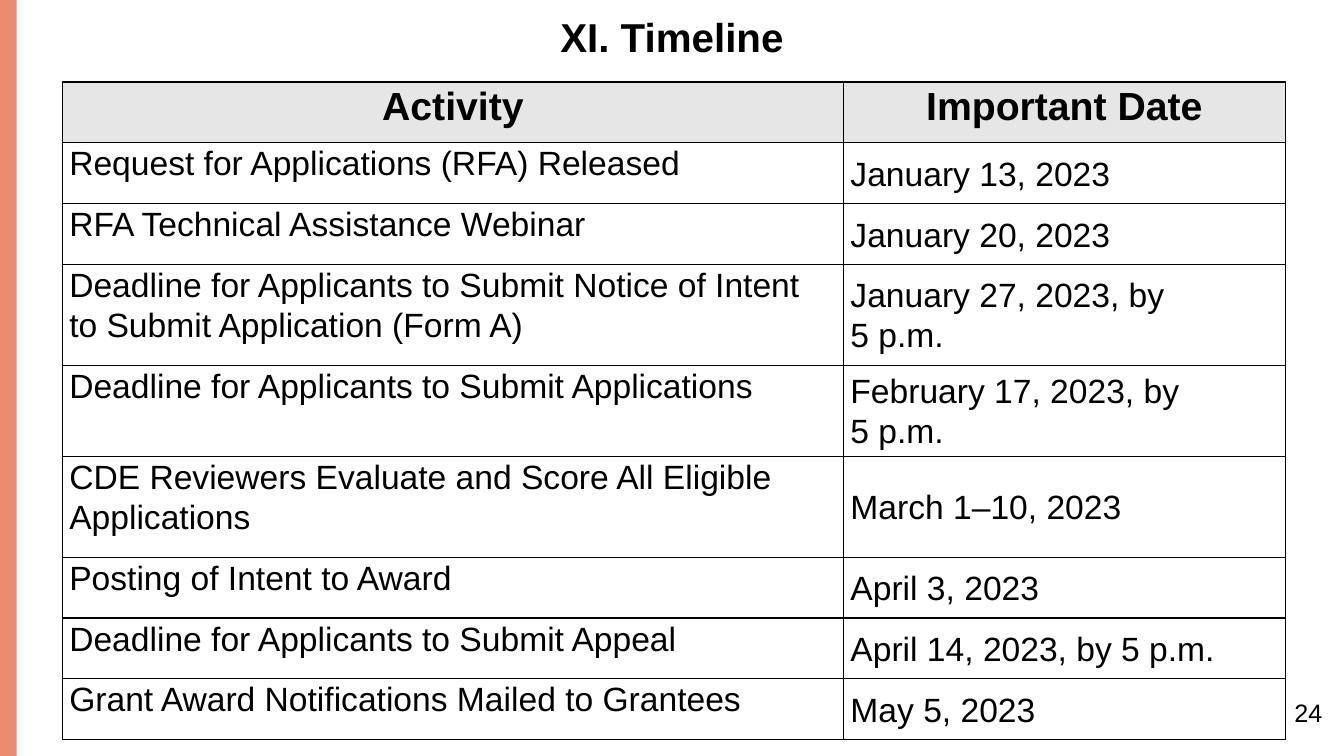
from dataclasses import dataclass

from lxml.etree import SubElement
from pptx import Presentation
from pptx.dml.color import RGBColor
from pptx.enum.shapes import MSO_SHAPE as Shape
from pptx.enum.text import MSO_ANCHOR as Anchor, MSO_AUTO_SIZE as AutoSize, PP_ALIGN as Align
from pptx.oxml.ns import qn
from pptx.util import Pt


@dataclass(frozen=True)
class Theme:
    font: str = "Arial"
    ink: str = "000000"
    paper: str = "FFFFFF"
    header: str = "E7E6E6"
    accent: str = "ED8B6F"
    title_size: float = 28.8
    header_size: float = 28
    body_size: float = 24
    number_size: float = 18


@dataclass(frozen=True)
class Milestone:
    activity: str
    date: str
    height: float = 43.5


THEME = Theme()
COLUMN_WIDTHS = (558, 315.5)
HEADINGS = Milestone("Activity", "Important Date")
MILESTONES = (
    Milestone("Request for Applications (RFA) Released", "January 13, 2023"),
    Milestone("RFA Technical Assistance Webinar", "January 20, 2023"),
    Milestone("Deadline for Applicants to Submit Notice of Intent to Submit Application (Form A)",
              "January 27, 2023, by \n5 p.m.", 72),
    Milestone("Deadline for Applicants to Submit Applications", "February 17, 2023, by \n5 p.m.", 65),
    Milestone("CDE Reviewers Evaluate and Score All Eligible Applications", "March 1–10, 2023", 72),
    Milestone("Posting of Intent to Award", "April 3, 2023"),
    Milestone("Deadline for Applicants to Submit Appeal", "April 14, 2023, by 5 p.m."),
    Milestone("Grant Award Notifications Mailed to Grantees", "May 5, 2023"),
)


def write(para, text: str, size: float, bold: bool = False) -> None:
    """Add text run by run, with a line break between lines."""
    for index, line in enumerate(text.split("\n")):
        if index:
            para.add_line_break()
        span = para.add_run()
        span.text = line
        span.font.name = THEME.font
        span.font.size = Pt(size)
        span.font.bold = bold
        span.font.color.rgb = RGBColor.from_string(THEME.ink)


def add_borders(cell, width: float = 1) -> None:
    properties = cell._tc.get_or_add_tcPr()
    for position, side in enumerate(("lnL", "lnR", "lnT", "lnB")):
        line = SubElement(properties, qn(f"a:{side}"), w=str(Pt(width)))
        fill = SubElement(line, qn("a:solidFill"))
        SubElement(fill, qn("a:srgbClr"), val=THEME.ink)
        properties.insert(position, line)


def fill_cell(cell, text: str, is_header: bool, is_date: bool) -> None:
    cell.margin_left = cell.margin_right = Pt(5)
    cell.margin_top = cell.margin_bottom = Pt(0)
    cell.vertical_anchor = Anchor.MIDDLE if is_date and not is_header else Anchor.TOP
    cell.fill.solid()
    cell.fill.fore_color.rgb = RGBColor.from_string(THEME.header if is_header else THEME.paper)
    add_borders(cell)
    para = cell.text_frame.paragraphs[0]
    para.alignment = Align.CENTER if is_header else Align.LEFT
    para.line_spacing = 1.07
    para.space_before = para.space_after = Pt(6)
    write(para, text, THEME.header_size if is_header else THEME.body_size, is_header)


def add_accent_bar(page) -> None:
    bar = page.shapes.add_shape(Shape.RECTANGLE, Pt(0), Pt(0), Pt(12), Pt(540))
    bar.shadow.inherit = False
    bar.fill.solid()
    bar.fill.fore_color.rgb = RGBColor.from_string(THEME.accent)
    bar.line.fill.background()


def add_title(page, text: str) -> None:
    title = page.shapes.title
    title.left, title.top, title.width, title.height = Pt(12), Pt(10.5), Pt(936), Pt(35)
    frame = title.text_frame
    frame.auto_size = AutoSize.NONE
    frame.vertical_anchor = Anchor.MIDDLE
    para = frame.paragraphs[0]
    para.alignment = Align.CENTER
    para.line_spacing = 0.9
    write(para, text, THEME.title_size, bold=True)


def add_timeline(page) -> None:
    rows = (HEADINGS, *MILESTONES)
    height = sum(row.height for row in rows)
    table = page.shapes.add_table(len(rows), 2, Pt(44.5), Pt(58.5),
                                  Pt(sum(COLUMN_WIDTHS)), Pt(height)).table
    table.first_row = table.horz_banding = False
    for column, width in zip(table.columns, COLUMN_WIDTHS):
        column.width = Pt(width)
    for index, row in enumerate(rows):
        table.rows[index].height = Pt(row.height)
        for column, text in enumerate((row.activity, row.date)):
            fill_cell(table.cell(index, column), text, row is HEADINGS, column == 1)


def add_page_number(page, number: str) -> None:
    box = page.shapes.add_textbox(Pt(917.5), Pt(494.5), Pt(42.5), Pt(34.5))
    box.text_frame.word_wrap = True
    write(box.text_frame.paragraphs[0], number, THEME.number_size)


def main() -> None:
    deck = Presentation()
    deck.slide_width, deck.slide_height = Pt(960), Pt(540)
    page = deck.slides.add_slide(deck.slide_layouts[5])  # title only
    add_accent_bar(page)
    add_title(page, "XI. Timeline")
    add_timeline(page)
    add_page_number(page, "24")
    deck.save("out.pptx")


if __name__ == "__main__":
    main()
